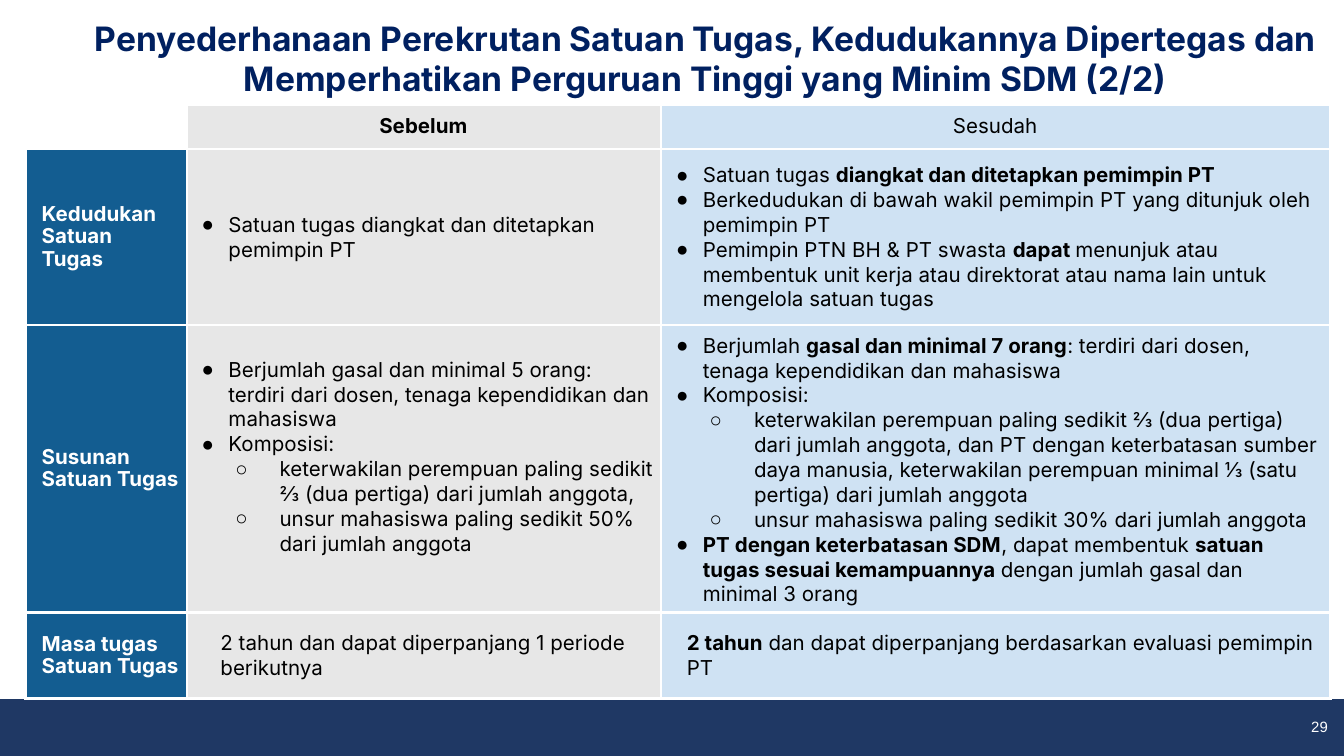
from lxml import etree
from pptx import Presentation
from pptx.dml.color import RGBColor
from pptx.enum.shapes import MSO_SHAPE
from pptx.enum.text import MSO_ANCHOR, PP_ALIGN
from pptx.oxml.ns import qn
from pptx.util import Inches, Pt

CENTER, RIGHT = PP_ALIGN.CENTER, PP_ALIGN.RIGHT
TOP, MIDDLE = MSO_ANCHOR.TOP, MSO_ANCHOR.MIDDLE
RECTANGLE = MSO_SHAPE.RECTANGLE

COLORS = {
    "white": "FFFFFF", "black": "000000", "title": "002060", "footer": "1F3864",
    "label": "135D91", "before": "D8D8D8", "after": "CFE2F3",
}
FONT, SMALL_FONT = "Inter", "Arial"

# Content: each cell lists (paragraph style, text); ** switches bold on and off
TITLE = ("Penyederhanaan Perekrutan Satuan Tugas, Kedudukannya Dipertegas dan "
         "Memperhatikan Perguruan Tinggi yang Minim SDM (2/2)")
PAGE_NUMBER = "29"
ROWS = [
    [
        [],
        [("head", "**Sebelum**")],
        [("head", "Sesudah")],
    ],
    [
        [("label", "**Kedudukan Satuan Tugas**")],
        [("bullet", "Satuan tugas diangkat dan ditetapkan pemimpin PT")],
        [("bullet", "Satuan tugas **diangkat dan ditetapkan pemimpin PT**"),
         ("bullet", "Berkedudukan di bawah wakil pemimpin PT yang ditunjuk oleh pemimpin PT"),
         ("bullet", "Pemimpin PTN BH & PT swasta **dapat **menunjuk atau membentuk unit kerja "
                    "atau direktorat atau nama lain untuk mengelola satuan tugas")],
    ],
    [
        [("label", "**Susunan Satuan Tugas**")],
        [("bullet", "Berjumlah gasal dan minimal 5 orang: terdiri dari dosen, "
                    "tenaga kependidikan dan mahasiswa"),
         ("bullet", "Komposisi:"),
         ("sub", "keterwakilan perempuan paling sedikit ⅔ (dua pertiga) dari jumlah anggota,"),
         ("sub", "unsur mahasiswa paling sedikit 50% dari jumlah anggota")],
        [("bullet", "Berjumlah **gasal dan minimal 7 orang**: terdiri dari dosen, "
                    "tenaga kependidikan dan mahasiswa"),
         ("bullet", "Komposisi:"),
         ("sub", "keterwakilan perempuan paling sedikit ⅔ (dua pertiga) dari jumlah anggota, "
                 "dan PT dengan keterbatasan sumber daya manusia, keterwakilan perempuan "
                 "minimal ⅓ (satu pertiga) dari jumlah anggota"),
         ("sub", "unsur mahasiswa paling sedikit 30% dari jumlah anggota"),
         ("bullet", "**PT dengan keterbatasan SDM**, dapat membentuk **satuan tugas sesuai "
                    "kemampuannya **dengan jumlah gasal dan minimal 3 orang")],
    ],
    [
        [("label", "**Masa tugas Satuan Tugas**")],
        [("term_before", "2 tahun dan dapat diperpanjang 1 periode berikutnya")],
        [("term_after", "**2 tahun** dan dapat diperpanjang berdasarkan evaluasi pemimpin PT")],
    ],
]
COLUMN_WIDTHS = [1.2, 3.53, 4.98]
ROW_HEIGHTS = [0.33, 1.31, 2.13, 0.64]
COLUMN_FILLS = ["label", "before", "after"]

# Paragraph styles: left margin, first-line indent, bullet, level, line spacing
STYLES = {
    "head": (0.05, 0, None, 0, 0.9),
    "label": (0.12, 0, None, 0, 0.9),
    "bullet": (0.31, -0.2, "●", 0, 1.0),
    "sub": (0.69, -0.33, "○", 1, 1.0),
    "term_before": (0.25, 0, None, 0, 1.0),
    "term_after": (0.19, 0, None, 0, 1.0),
}


def rgb(name):
    return RGBColor.from_string(COLORS[name])


def add_color(parent, name):
    return etree.SubElement(parent, qn("a:srgbClr"), val=COLORS[name])


def set_indent(paragraph, left, first=0):
    properties = paragraph._p.get_or_add_pPr()
    properties.set("marL", str(Inches(left)))
    properties.set("indent", str(Inches(first)))
    return properties


def add_run(paragraph, text, size, color, bold=False, font=FONT):
    run = paragraph.add_run()
    run.text = text
    run.font.name, run.font.size, run.font.bold = font, Pt(size), bold
    run.font.color.rgb = rgb(color)


def set_frame(frame, anchor, horizontal, vertical):
    frame.word_wrap = True
    frame.vertical_anchor = anchor
    frame.margin_left = frame.margin_right = Inches(horizontal)
    frame.margin_top = frame.margin_bottom = Inches(vertical)


def write_paragraph(paragraph, style, text):
    left, first, bullet, level, spacing = STYLES[style]
    properties = set_indent(paragraph, left, first)
    if bullet:
        add_color(etree.SubElement(properties, qn("a:buClr")), "black")
        etree.SubElement(properties, qn("a:buFont"), typeface=SMALL_FONT)
        etree.SubElement(properties, qn("a:buChar"), char=bullet)
    paragraph.level = level
    paragraph.line_spacing = spacing
    if style == "head":
        paragraph.alignment = CENTER
    color = "white" if style == "label" else "black"
    for i, part in enumerate(text.split("**")):
        if part:
            add_run(paragraph, part, 11, color, bold=i % 2 == 1)


def fill_cell(cell, paragraphs, fill):
    cell.vertical_anchor = MIDDLE
    cell.margin_left = 0
    cell.margin_right = cell.margin_top = cell.margin_bottom = Inches(0.06)
    frame = cell.text_frame
    for i, (style, text) in enumerate(paragraphs):
        paragraph = frame.add_paragraph() if i else frame.paragraphs[0]
        write_paragraph(paragraph, style, text)
    if not paragraphs:
        etree.SubElement(frame.paragraphs[0]._p, qn("a:endParaRPr"), sz="1100")

    cell.fill.solid()
    cell.fill.fore_color.rgb = rgb(fill)
    properties = cell._tc.get_or_add_tcPr()
    if fill == "before":
        fill_color = properties.find(qn("a:solidFill")).find(qn("a:srgbClr"))
        etree.SubElement(fill_color, qn("a:alpha"), val="60000")
    for i, side in enumerate(["lnL", "lnR", "lnT", "lnB"]):
        border = etree.Element(qn("a:" + side), w=str(Pt(1.5)))
        add_color(etree.SubElement(border, qn("a:solidFill")), "white")
        properties.insert(i, border)


prs = Presentation()
prs.slide_width = Inches(10)
prs.slide_height = prs.slide_width * 9 // 16
slide = prs.slides.add_slide(prs.slide_layouts[5])

# Footer bar and page number
footer = slide.shapes.add_shape(RECTANGLE, 0, Inches(5.21), Inches(10), Inches(0.41))
footer.shadow.inherit = False
footer.fill.solid()
footer.fill.fore_color.rgb = rgb("footer")
footer.line.color.rgb = rgb("footer")
footer.line.width = Pt(1)

page = slide.shapes.add_textbox(Inches(9.3), Inches(5.31), Inches(0.65), Inches(0.2))
set_frame(page.text_frame, MIDDLE, 0.07, 0.04)
page_line = page.text_frame.paragraphs[0]
page_line.alignment = RIGHT
add_run(page_line, PAGE_NUMBER, 8, "white", font=SMALL_FONT)

# Comparison table
table = slide.shapes.add_table(
    len(ROWS), len(COLUMN_WIDTHS), Inches(0.19), Inches(0.78),
    Inches(sum(COLUMN_WIDTHS)), Inches(sum(ROW_HEIGHTS))).table
table.first_row = table.horz_banding = False
for column, width in zip(table.columns, COLUMN_WIDTHS):
    column.width = Inches(width)
for r, (row, height) in enumerate(zip(ROWS, ROW_HEIGHTS)):
    table.rows[r].height = Inches(height)
    for c, paragraphs in enumerate(row):
        fill_cell(table.cell(r, c), paragraphs, COLUMN_FILLS[c] if paragraphs else "white")

# Wrap the first label on three lines, and raise the earlier composition
table.cell(1, 0).margin_right = Inches(0.12)
table.cell(2, 1).margin_bottom = Inches(0.24)

# Title
title = slide.shapes.title
title.left, title.top, title.width, title.height = 0, Inches(0.03), Inches(10), Inches(0.81)
set_frame(title.text_frame, TOP, 0.1, 0.1)
title_line = title.text_frame.paragraphs[0]
title_line.alignment = CENTER
set_indent(title_line, 0.5)
add_run(title_line, TITLE, 18, "title", bold=True)

prs.save("out.pptx")
